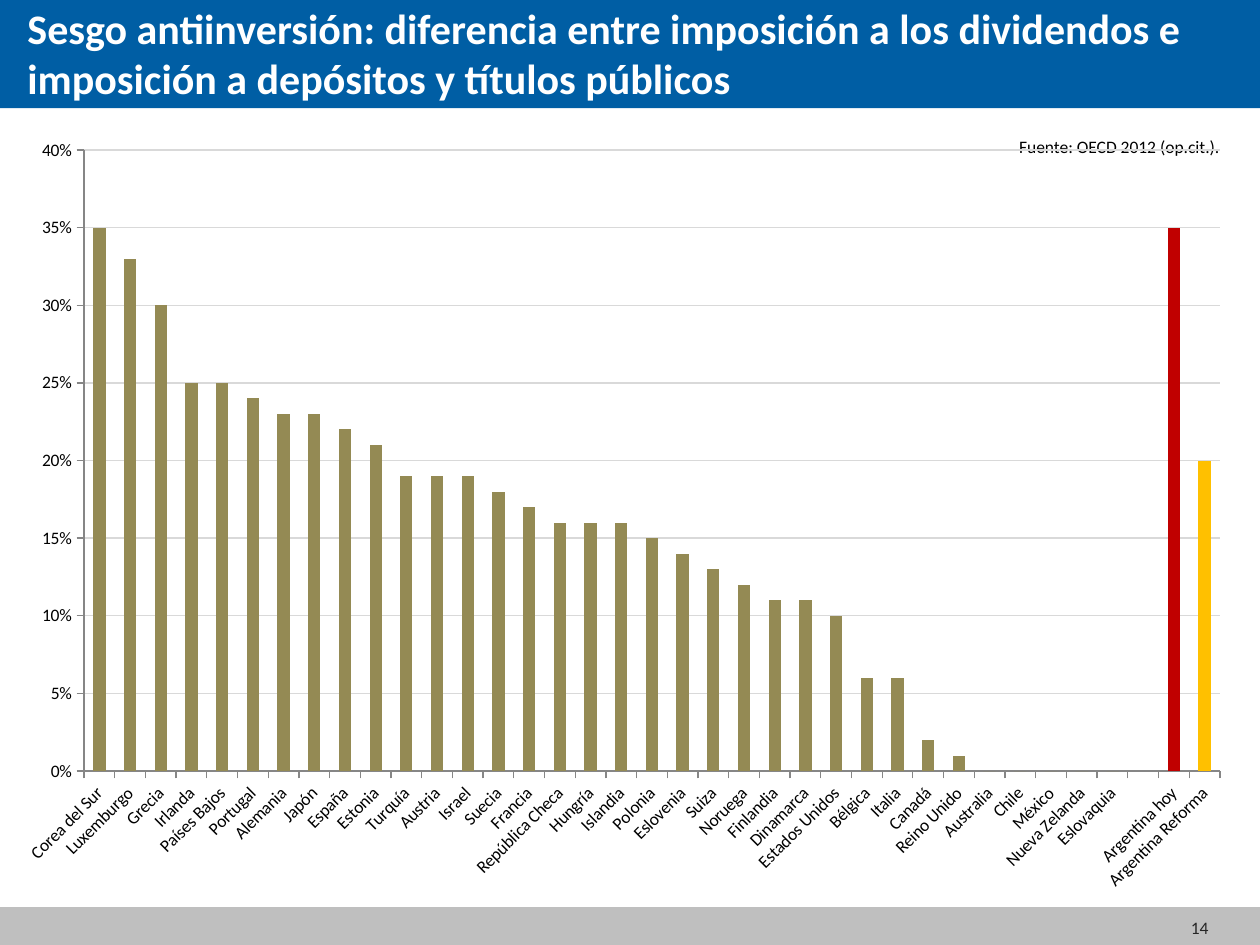
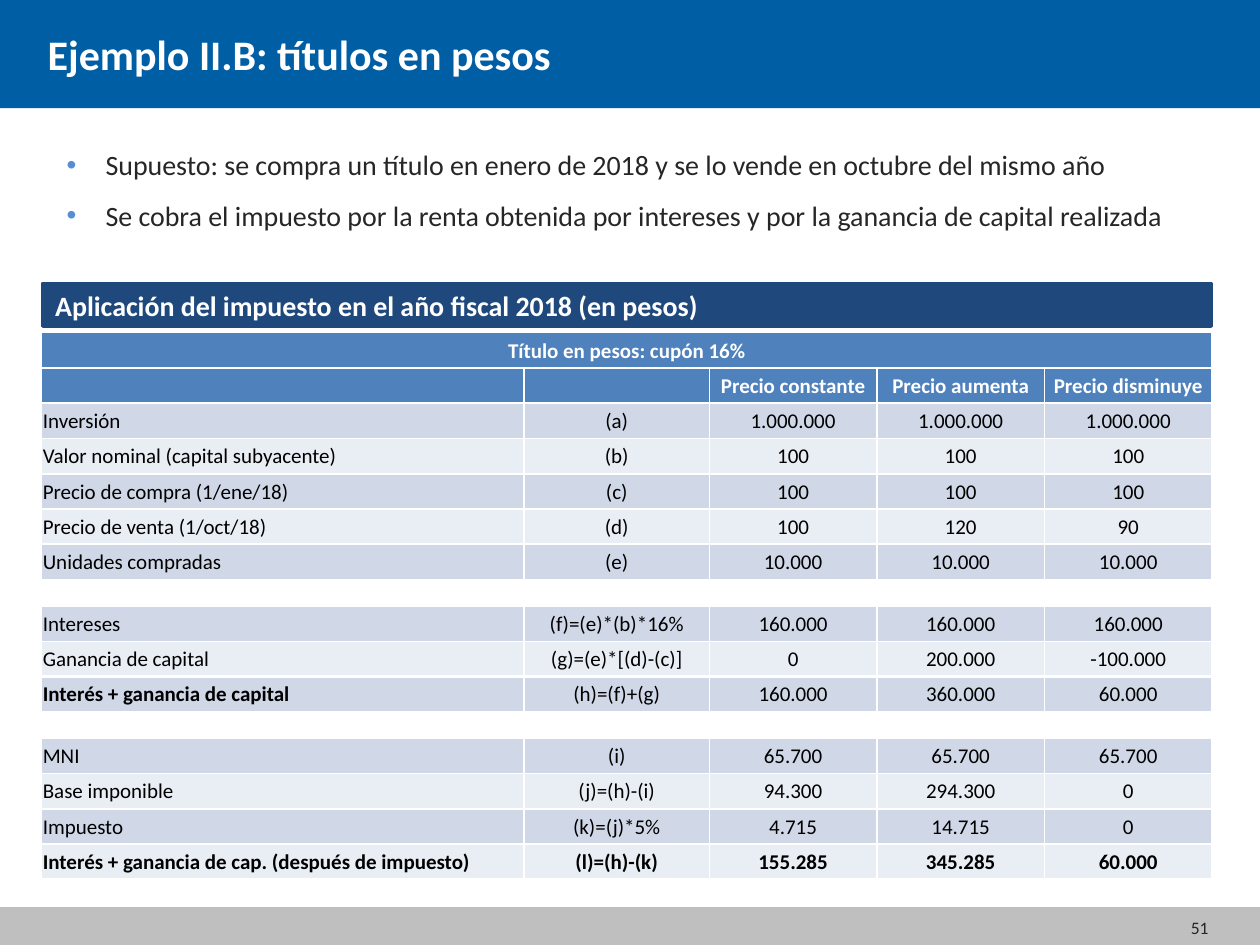
from lxml.etree import SubElement
from pptx import Presentation
from pptx.chart.data import CategoryChartData
from pptx.dml.color import RGBColor
from pptx.enum.chart import XL_CHART_TYPE as ChartType, XL_TICK_MARK as TickMark
from pptx.enum.shapes import MSO_SHAPE as Shape
from pptx.enum.text import MSO_ANCHOR as Anchor, PP_ALIGN as Align
from pptx.oxml.ns import qn
from pptx.util import Inches, Pt

FONT = "Calibri"
WHITE = RGBColor(0xFF, 0xFF, 0xFF)
BLACK = RGBColor(0x00, 0x00, 0x00)
DARK_TEXT = RGBColor(0x26, 0x26, 0x26)
TITLE_BLUE = RGBColor(0x00, 0x5E, 0xA4)
FOOTER_GRAY = RGBColor(0xBF, 0xBF, 0xBF)
NAVY = RGBColor(0x1F, 0x49, 0x7D)
BULLET_BLUE = RGBColor(0x55, 0x8E, 0xD5)
HEADER_BLUE = RGBColor(0x4F, 0x81, 0xBD)
ROW_DARK = RGBColor(0xD0, 0xD8, 0xE8)
ROW_LIGHT = RGBColor(0xE9, 0xED, 0xF4)
GRID_GRAY = RGBColor(0xD9, 0xD9, 0xD9)
AXIS_GRAY = RGBColor(0x86, 0x86, 0x86)
OLIVE = RGBColor(0x94, 0x8A, 0x54)
RED = RGBColor(0xC0, 0x00, 0x00)
GOLD = RGBColor(0xFF, 0xC0, 0x00)

TAX_GAPS = [
    ("Corea del Sur", 0.35), ("Luxemburgo", 0.33), ("Grecia", 0.3),
    ("Irlanda", 0.25), ("Países Bajos", 0.25), ("Portugal", 0.24),
    ("Alemania", 0.23), ("Japón", 0.23), ("España", 0.22),
    ("Estonia", 0.21), ("Turquía", 0.19), ("Austria", 0.19),
    ("Israel", 0.19), ("Suecia", 0.18), ("Francia", 0.17),
    ("República Checa", 0.16), ("Hungría", 0.16), ("Islandia", 0.16),
    ("Polonia", 0.15), ("Eslovenia", 0.14), ("Suiza", 0.13),
    ("Noruega", 0.12), ("Finlandia", 0.11), ("Dinamarca", 0.11),
    ("Estados Unidos", 0.1), ("Bélgica", 0.06), ("Italia", 0.06),
    ("Canadá", 0.02), ("Reino Unido", 0.01), ("Australia", 0),
    ("Chile", 0), ("México", 0), ("Nueva Zelanda", 0), ("Eslovaquia", 0),
    ("", None), ("Argentina hoy", 0.35), ("Argentina Reforma", 0.2),
]
HIGHLIGHTS = {"Argentina hoy": RED, "Argentina Reforma": GOLD}

GAP_ROW = ("",) * 5
TAX_ROWS = [
    ("Título en pesos: cupón 16%", "", "", "", ""),
    ("", "", "Precio constante", "Precio aumenta", "Precio disminuye"),
    ("Inversión", "(a)", "1.000.000", "1.000.000", "1.000.000"),
    ("Valor nominal (capital subyacente)", "(b)", "100", "100", "100"),
    ("Precio de compra (1/ene/18)", "(c)", "100", "100", "100"),
    ("Precio de venta (1/oct/18)", "(d)", "100", "120", "90"),
    ("Unidades compradas", "(e)", "10.000", "10.000", "10.000"),
    GAP_ROW,
    ("Intereses", "(f)=(e)*(b)*16%", "160.000", "160.000", "160.000"),
    ("Ganancia de capital", "(g)=(e)*[(d)-(c)]", "0", "200.000", "-100.000"),
    ("Interés + ganancia de capital", "(h)=(f)+(g)", "160.000", "360.000", "60.000"),
    GAP_ROW,
    ("MNI", "(i)", "65.700", "65.700", "65.700"),
    ("Base imponible", "(j)=(h)-(i)", "94.300", "294.300", "0"),
    ("Impuesto", "(k)=(j)*5%", "4.715", "14.715", "0"),
    ("Interés + ganancia de cap. (después de impuesto)", "(l)=(h)-(k)",
     "155.285", "345.285", "60.000"),
]
HEADER_ROWS = 2
COLUMN_WIDTHS = (3.83, 1.47, 1.33, 1.33, 1.33)


def style_font(font, size, color, bold=False):
    font.name = FONT
    font.size = Pt(size)
    font.bold = bold
    font.color.rgb = color


def fill_text(text_frame, text, size, color, bold=False, align=Align.LEFT):
    text_frame.text = text
    for paragraph in text_frame.paragraphs:
        paragraph.alignment = align
        for run in paragraph.runs:
            style_font(run.font, size, color, bold)


def add_text(slide, box, text, size, color, bold=False, align=Align.LEFT, wrap=True):
    text_box = slide.shapes.add_textbox(*map(Inches, box))
    text_frame = text_box.text_frame
    text_frame.word_wrap = wrap
    fill_text(text_frame, text, size, color, bold, align)
    return text_frame


def add_band(slide, box, color, outlined=True):
    band = slide.shapes.add_shape(Shape.RECTANGLE, *map(Inches, box))
    band.shadow.inherit = False
    band.fill.solid()
    band.fill.fore_color.rgb = color
    if outlined:
        band.line.color.rgb = color
        band.line.width = Pt(2)
    else:
        band.line.fill.background()
    return band


def add_base_slide(presentation, title, title_box, number):
    slide = presentation.slides.add_slide(presentation.slide_layouts[6])
    add_band(slide, (0, 0, 10, 0.86), TITLE_BLUE, outlined=False)
    add_band(slide, (0, 7.21, 10, 0.29), FOOTER_GRAY)
    footer = add_text(slide, (7.36, 7.16, 2.33, 0.4), number, 10, DARK_TEXT,
                      align=Align.RIGHT)
    footer.vertical_anchor = Anchor.MIDDLE
    add_text(slide, title_box, title, 24, WHITE, bold=True)
    return slide


def add_bullets(slide, box, lines):
    text_frame = add_text(slide, box, "\n".join(lines), 16, DARK_TEXT)
    for paragraph in text_frame.paragraphs:
        paragraph.line_spacing = 1.5
        properties = paragraph._p.get_or_add_pPr()
        properties.set("marL", str(Inches(0.31)))
        properties.set("indent", str(-Inches(0.31)))
        bullet_color = SubElement(properties, qn("a:buClr"))
        SubElement(bullet_color, qn("a:srgbClr"), val=str(BULLET_BLUE))
        SubElement(properties, qn("a:buFont"), typeface="Arial")
        SubElement(properties, qn("a:buChar"), char="•")


def place_plot(chart, **fractions):
    plot_area = chart._chartSpace.chart.plotArea
    layout = plot_area.find(qn("c:layout"))
    if layout is None:
        layout = SubElement(plot_area, qn("c:layout"))
        plot_area.insert(0, layout)
    manual = SubElement(layout, qn("c:manualLayout"))
    SubElement(manual, qn("c:layoutTarget"), val="inner")
    for mode in ("xMode", "yMode"):
        SubElement(manual, qn(f"c:{mode}"), val="edge")
    for side, fraction in fractions.items():
        SubElement(manual, qn(f"c:{side}"), val=str(fraction))


def style_axis(axis):
    axis.major_tick_mark = TickMark.OUTSIDE
    axis.minor_tick_mark = TickMark.NONE
    axis.format.line.color.rgb = AXIS_GRAY
    style_font(axis.tick_labels.font, 10, BLACK)


def add_tax_gap_chart(slide, box):
    names, values = zip(*TAX_GAPS)
    data = CategoryChartData(number_format="0%")
    data.categories = names
    data.add_series("Series 1", values)
    frame = slide.shapes.add_chart(ChartType.COLUMN_CLUSTERED, *map(Inches, box), data)
    chart = frame.chart
    chart.has_legend = False
    chart.has_title = False
    style_font(chart.font, 10, BLACK)
    place_plot(chart, x=0.0675, y=0.0325, w=0.9125, h=0.795)

    style_axis(chart.category_axis)
    label_body = chart.category_axis._element.find(qn("c:txPr")).find(qn("a:bodyPr"))
    label_body.set("rot", "-2700000")
    label_body.set("vert", "horz")

    value_axis = chart.value_axis
    style_axis(value_axis)
    value_axis.minimum_scale = 0
    value_axis.maximum_scale = 0.4
    value_axis.major_unit = 0.05
    value_axis.tick_labels.number_format = "0%"
    value_axis.tick_labels.number_format_is_linked = False
    grid_line = value_axis.major_gridlines.format.line
    grid_line.color.rgb = GRID_GRAY
    grid_line.width = Pt(0.75)

    plot = chart.plots[0]
    plot.gap_width = 150
    plot.vary_by_categories = False
    series = plot.series[0]
    series.invert_if_negative = False
    series.format.fill.solid()
    series.format.fill.fore_color.rgb = OLIVE
    for name, color in HIGHLIGHTS.items():
        fill = series.points[names.index(name)].format.fill
        fill.solid()
        fill.fore_color.rgb = color


def add_cell_borders(cell, bottom_width):
    properties = cell._tc.get_or_add_tcPr()
    for side, width in (("L", 1), ("R", 1), ("T", 1), ("B", bottom_width)):
        line = SubElement(properties, qn(f"a:ln{side}"), w=str(Pt(width)))
        fill = SubElement(line, qn("a:solidFill"))
        SubElement(fill, qn("a:srgbClr"), val=str(WHITE))


def fill_cell(cell, text, text_size, color, bold, align, background, bottom_width):
    cell.margin_left = cell.margin_right = cell.margin_top = Inches(0.01)
    cell.margin_bottom = 0
    cell.vertical_anchor = Anchor.MIDDLE
    add_cell_borders(cell, bottom_width)
    if background is None:
        cell.fill.background()
    else:
        cell.fill.solid()
        cell.fill.fore_color.rgb = background
    fill_text(cell.text_frame, text, text_size, color, bold, align)
    if not text:
        end = cell.text_frame.paragraphs[0]._p.get_or_add_endParaRPr()
        end.set("sz", str(text_size * 100))


def row_background(index, row):
    if index < HEADER_ROWS:
        return HEADER_BLUE
    if row == GAP_ROW:
        return None
    return ROW_LIGHT if index % 2 else ROW_DARK


def add_tax_table(slide, left, top):
    frame = slide.shapes.add_table(
        len(TAX_ROWS), len(COLUMN_WIDTHS), Inches(left), Inches(top),
        Inches(sum(COLUMN_WIDTHS)), Inches(4.34))
    table = frame.table
    for column, width in zip(table.columns, COLUMN_WIDTHS):
        column.width = Inches(width)
    for i, row in enumerate(TAX_ROWS):
        is_header = i < HEADER_ROWS
        is_gap = row == GAP_ROW
        is_last = i == len(TAX_ROWS) - 1
        table.rows[i].height = Inches(0.21 if is_gap else 0.28)
        for j, text in enumerate(row):
            is_label = j == 0 and not is_header
            fill_cell(
                table.cell(i, j), text, 10 if is_gap else 12,
                WHITE if is_header else BLACK,
                is_header or is_last or (is_label and text.startswith("Interés +")),
                Align.LEFT if is_label else Align.CENTER,
                row_background(i, row), 1.5 if i % 2 else 1)
    table.cell(0, 0).merge(table.cell(0, len(COLUMN_WIDTHS) - 1))


def add_dividend_slide(presentation):
    slide = add_base_slide(
        presentation,
        "Sesgo antiinversión: diferencia entre imposición a los dividendos e "
        "imposición a depósitos y títulos públicos",
        (0.12, -0.03, 9.76, 0.91), "14")
    add_text(slide, (7.99, 1.03, 1.82, 0.27), "Fuente: OECD 2012 (op.cit.).",
             10, BLACK, wrap=False)
    add_tax_gap_chart(slide, (0, 0.99, 9.88, 6.2))


def add_bond_slide(presentation):
    slide = add_base_slide(presentation, "Ejemplo II.B: títulos en pesos",
                           (0.28, 0.18, 9.45, 0.5), "51")
    heading = add_band(slide, (0.34, 2.25, 9.27, 0.34), NAVY)
    heading.text_frame.vertical_anchor = Anchor.MIDDLE
    fill_text(heading.text_frame,
              "Aplicación del impuesto en el año fiscal 2018 (en pesos)",
              16, WHITE, bold=True)
    add_bullets(slide, (0.43, 0.99, 9.13, 0.91), [
        "Supuesto: se compra un título en enero de 2018 y se lo vende en octubre "
        "del mismo año",
        "Se cobra el impuesto por la renta obtenida por intereses y por la ganancia "
        "de capital realizada",
    ])
    add_tax_table(slide, 0.33, 2.64)


def main():
    presentation = Presentation()
    presentation.slide_width = Inches(10)
    presentation.slide_height = Inches(7.5)
    add_dividend_slide(presentation)
    add_bond_slide(presentation)
    presentation.save("out.pptx")


if __name__ == "__main__":
    main()
